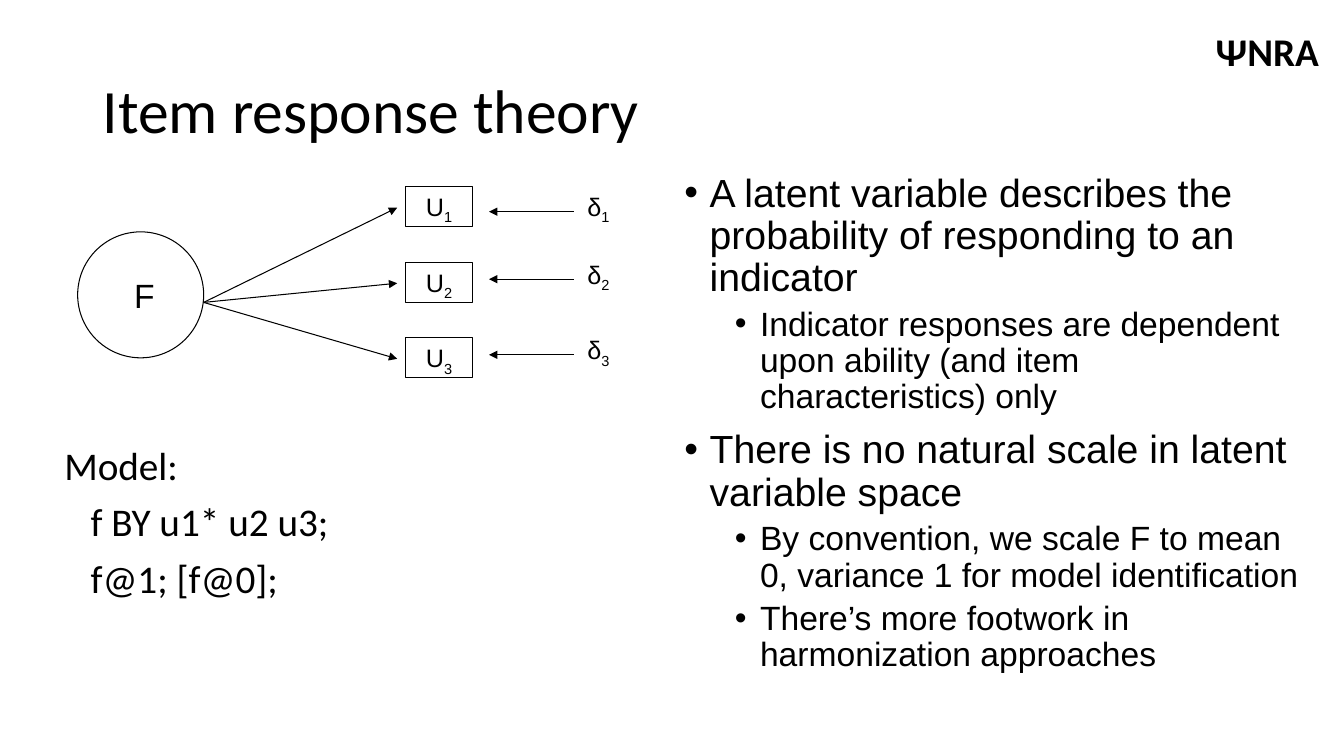
import pptx
import pptx.util
import pptx.dml.color
import pptx.enum.shapes
import pptx.enum.text
import pptx.oxml.ns
import lxml.etree

EMU_PER_PX = 9144
BLACK = pptx.dml.color.RGBColor(0, 0, 0)
LEFT = pptx.enum.text.PP_ALIGN.LEFT
CENTER = pptx.enum.text.PP_ALIGN.CENTER
TOP = pptx.enum.text.MSO_ANCHOR.TOP
MIDDLE = pptx.enum.text.MSO_ANCHOR.MIDDLE
SHAPES = pptx.enum.shapes.MSO_SHAPE

INDICATOR_TOPS = [185, 260, 335]
RESIDUAL_TOPS = [185, 252, 327]
MODEL_LINES = [("Model:", 0), ("f BY u1* u2 u3;", 26), ("f@1; [f@0];", 26)]
BULLETS = [
    (0, "A latent variable describes the probability of responding to an indicator"),
    (1, "Indicator responses are dependent upon ability (and item characteristics) only"),
    (0, "There is no natural scale in latent variable space"),
    (1, "By convention, we scale F to mean 0, variance 1 for model identification"),
    (1, "There’s more footwork in harmonization approaches"),
]


def px(length):
    return pptx.util.Emu(length * EMU_PER_PX)


def add_child(parent, tag, **attributes):
    return lxml.etree.SubElement(parent, pptx.oxml.ns.qn(tag), **attributes)


def write_text(frame, text, size, font="Arial", bold=False, subscript="", align=LEFT,
               margin=0, bullet=False, line_spacing=1.0, space_before=0):
    paragraph = frame.add_paragraph() if frame.text else frame.paragraphs[0]
    paragraph.alignment = align
    paragraph.line_spacing = line_spacing
    paragraph.space_before = pptx.util.Pt(space_before)
    properties = paragraph._p.get_or_add_pPr()
    properties.set("marL", str(px(margin)))
    properties.set("indent", str(px(-25 if bullet else 0)))
    if bullet:
        add_child(properties, "a:buFont", typeface="Arial")
        add_child(properties, "a:buChar", char="•")
    for content in filter(None, (text, subscript)):
        run = paragraph.add_run()
        run.text = content
        run.font.size = pptx.util.Pt(size)
        run.font.name = font
        run.font.bold = bold
        run.font.color.rgb = BLACK
    if subscript:
        run._r.get_or_add_rPr().set("baseline", "-25000")


def add_text_box(slide, left, top, width, height):
    box = slide.shapes.add_textbox(px(left), px(top), px(width), px(height))
    box.text_frame.word_wrap = True
    return box.text_frame


def add_outline(slide, kind, left, top, width, height, anchor):
    shape = slide.shapes.add_shape(kind, px(left), px(top), px(width), px(height))
    shape.shadow.inherit = False
    shape.fill.background()
    shape.line.color.rgb = BLACK
    shape.line.width = pptx.util.Pt(0.75)
    shape.text_frame.word_wrap = True
    shape.text_frame.vertical_anchor = anchor
    return shape.text_frame


def add_arrow(slide, start_x, start_y, end_x, end_y):
    arrow = slide.shapes.add_connector(
        pptx.enum.shapes.MSO_CONNECTOR.STRAIGHT,
        px(start_x), px(start_y), px(end_x), px(end_y))
    arrow.line.color.rgb = BLACK
    arrow.line.width = pptx.util.Pt(0.75)
    add_child(arrow.line._get_or_add_ln(), "a:tailEnd", type="triangle")
    add_child(arrow._element.spPr, "a:effectLst")


def add_title(slide, text):
    title = slide.shapes.title
    title.left, title.top, title.width, title.height = map(px, (92, 40, 1150, 145))
    title.text_frame.vertical_anchor = MIDDLE
    write_text(title.text_frame, text, 44, font="Calibri", line_spacing=0.9)


def add_factor_diagram(slide):
    factor = add_outline(slide, SHAPES.OVAL, 77, 230, 125, 125, MIDDLE)
    write_text(factor, "F", 24, margin=28)
    rows = zip(INDICATOR_TOPS, RESIDUAL_TOPS)
    for number, (indicator_top, residual_top) in enumerate(rows, 1):
        add_arrow(slide, 202, 300, 394, indicator_top + 21)
        indicator = add_outline(slide, SHAPES.RECTANGLE, 402, indicator_top, 67, 40, TOP)
        residual = add_text_box(slide, 560, residual_top, 67, 40)
        for frame, symbol in ((indicator, "U"), (residual, "δ")):
            write_text(frame, symbol, 18, subscript=str(number), align=CENTER)
        add_arrow(slide, 569, residual_top + 25, 485, residual_top + 25)


def add_model_syntax(slide):
    frame = add_text_box(slide, 54, 438, 540, 273)
    for text, margin in MODEL_LINES:
        write_text(frame, text, 28, font="Calibri", margin=margin,
                   line_spacing=0.9, space_before=10)


def add_bullets(slide):
    frame = add_text_box(slide, 669, 167, 631, 556)
    for level, text in BULLETS:
        write_text(frame, text, 28 - 4 * level, margin=25 + 50 * level, bullet=True,
                   line_spacing=0.9, space_before=10 - 5 * level)


def add_group_name(slide, text):
    frame = add_text_box(slide, 1196, 22, 137, 57)
    frame.margin_right = 0
    write_text(frame, text, 28, font="Calibri", bold=True)


def main():
    presentation = pptx.Presentation()
    presentation.slide_width = px(1333)
    presentation.slide_height = px(750)
    slide = presentation.slides.add_slide(presentation.slide_layouts[5])
    add_title(slide, "Item response theory")
    add_factor_diagram(slide)
    add_model_syntax(slide)
    add_bullets(slide)
    add_group_name(slide, "ΨNRA")
    presentation.save("out.pptx")


if __name__ == "__main__":
    main()
